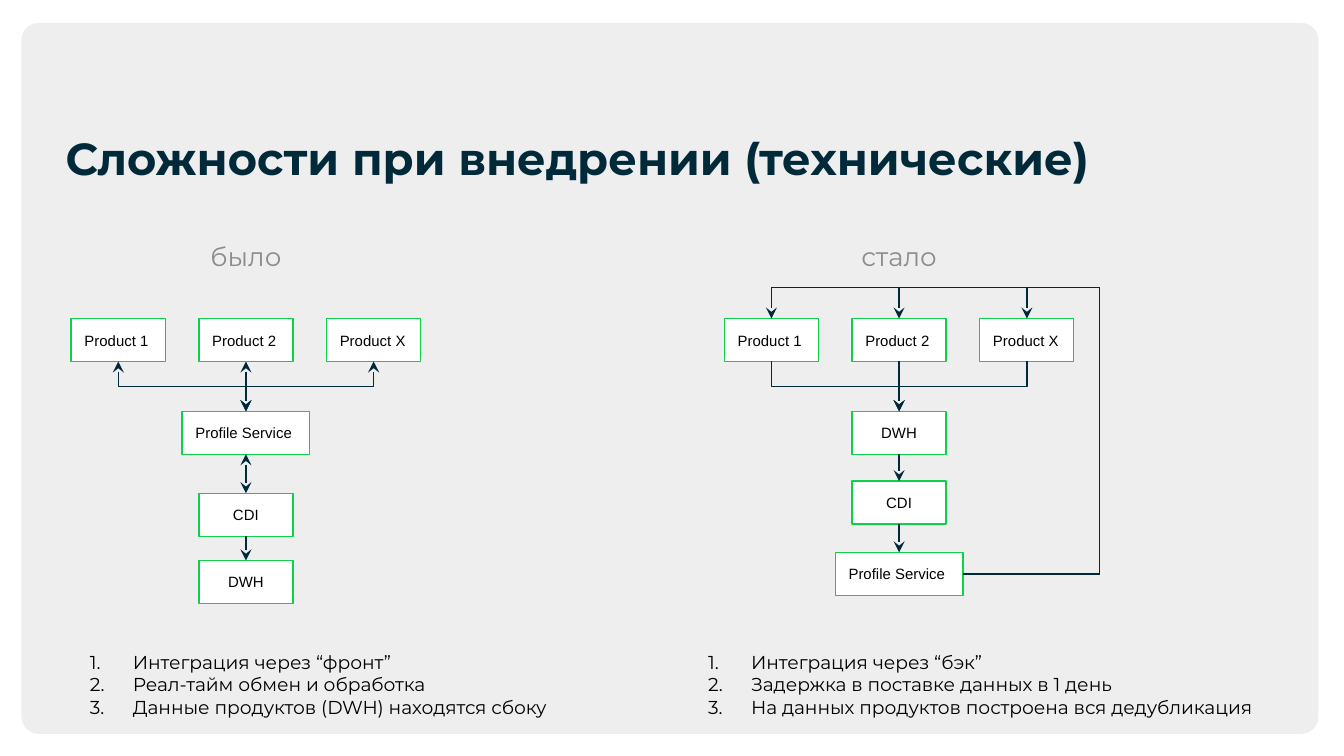
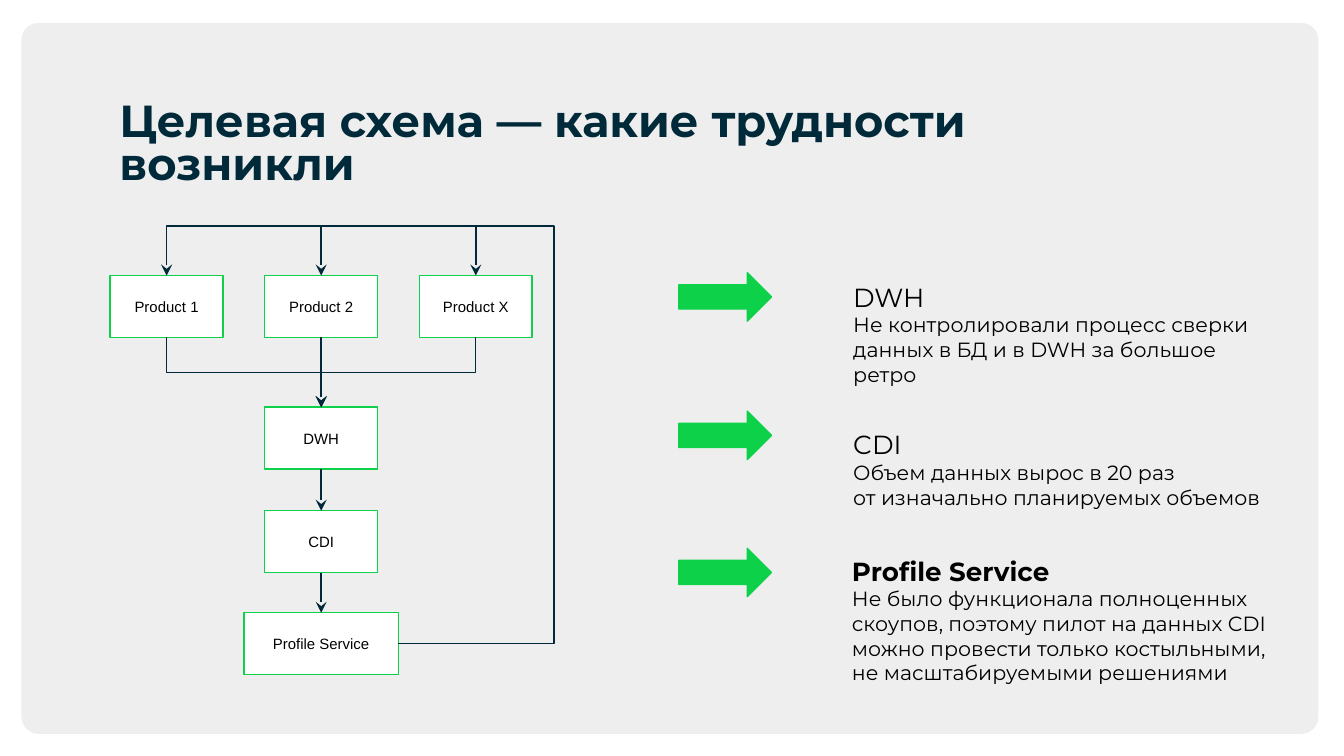
from lxml import etree
from pptx import Presentation
from pptx import util as u
from pptx.dml.color import RGBColor
from pptx.enum import shapes, text
from pptx.oxml.ns import qn

PX = u.Inches(0.01)
COLORS = {"panel": "EEEEEE", "navy": "002A3A", "green": "0DD149",
          "grey": "8C8C8C", "black": "000000", "white": "FFFFFF"}
LEFT, CENTER = text.PP_ALIGN.LEFT, text.PP_ALIGN.CENTER
TOP, MIDDLE = text.MSO_ANCHOR.TOP, text.MSO_ANCHOR.MIDDLE
SIDE = {"top": 0, "bottom": 2, "right": 3}


def px(value):
    return u.Emu(round(value * PX))


def rgb(name):
    return RGBColor.from_string(COLORS[name])


def write(shape, lines, font="Montserrat", size=10, color="black", bold=False, align=LEFT,
          anchor=TOP, margin_y=10, spacing=None, indent=None, numbered=False):
    """Fill a shape with paragraphs; a line is a string or (string, size, bold)."""
    frame = shape.text_frame
    frame.word_wrap = True
    frame.vertical_anchor = anchor
    frame.margin_left = frame.margin_right = px(10)
    frame.margin_top = frame.margin_bottom = px(margin_y)
    for index, line in enumerate(lines):
        content, line_size, line_bold = (line, size, bold) if isinstance(line, str) else line
        paragraph = frame.paragraphs[0] if index == 0 else frame.add_paragraph()
        paragraph.alignment = align
        if spacing:
            paragraph.line_spacing = spacing
        if indent:
            properties = paragraph._p.get_or_add_pPr()
            properties.set("marL", str(px(indent[0])))
            properties.set("indent", str(px(indent[1])))
            if numbered:
                bullet_color = etree.SubElement(properties, qn("a:buClr"))
                etree.SubElement(bullet_color, qn("a:srgbClr"), val=COLORS[color])
                etree.SubElement(properties, qn("a:buAutoNum"), type="arabicPeriod")
        for part_index, part in enumerate(content.split("\v")):
            if part_index:
                paragraph.add_line_break()
                line_break = paragraph._p.findall(qn("a:br"))[-1]
                etree.SubElement(line_break, qn("a:rPr"), sz=str(line_size * 100))
            run = paragraph.add_run()
            run.text = part
            run.font.name = font
            run.font.size = u.Pt(line_size)
            run.font.bold = line_bold
            run.font.color.rgb = rgb(color)


def add_text(slide, box, lines, **style):
    write(slide.shapes.add_textbox(*map(px, box)), lines, **style)


def add_box(slide, kind, box, fill, line=None):
    shape = slide.shapes.add_shape(kind, *map(px, box))
    shape.shadow.inherit = False
    shape.fill.solid()
    shape.fill.fore_color.rgb = rgb(fill)
    if line:
        shape.line.color.rgb = rgb(line)
        shape.line.width = u.Pt(0.75)
    else:
        shape.line.fill.background()
    return shape


def add_node(slide, box, label, align):
    node = add_box(slide, shapes.MSO_SHAPE.RECTANGLE, box, "white", "green")
    write(node, [label], font="Arial", size=8, align=align, anchor=MIDDLE)
    return node


def join(slide, kind, start, start_side, end, end_side, two_way=False):
    connector = slide.shapes.add_connector(kind, 0, 0, 0, 0)
    connector.begin_connect(start, SIDE[start_side])
    connector.end_connect(end, SIDE[end_side])
    connector.line.color.rgb = rgb("navy")
    connector.line.width = u.Pt(0.75)
    line = connector.line._get_or_add_ln()
    for tag in ("a:headEnd", "a:tailEnd") if two_way else ("a:tailEnd",):
        etree.SubElement(line, qn(tag), type="stealth")
    etree.SubElement(connector._element.spPr, qn("a:effectLst"))
    return connector


def bend(connector, preset, box, rotation, flip, adjustments):
    """Give an elbow its unrotated frame (EMU), turn and bend positions."""
    connector.left, connector.top, connector.width, connector.height = map(u.Emu, map(round, box))
    properties = connector._element.spPr
    frame = properties.find(qn("a:xfrm"))
    for name in ("flipH", "flipV"):
        frame.attrib.pop(name, None)
    frame.set("rot", str(rotation * 60000))
    if flip:
        frame.set("flipH", "1")
    geometry = properties.find(qn("a:prstGeom"))
    geometry.set("prst", preset)
    guides = geometry.find(qn("a:avLst"))
    if guides is None:
        guides = etree.SubElement(geometry, qn("a:avLst"))
    for index, value in enumerate(adjustments, 1):
        etree.SubElement(guides, qn("a:gd"), name=f"adj{index}",
                         fmla=f"val {round(value * 100000)}")


def middle_x(node):
    return node.left + node.width / 2


def join_down(slide, upper, lower, two_way=False):
    x1, x2 = middle_x(upper), middle_x(lower)
    if abs(x1 - x2) < PX:
        join(slide, shapes.MSO_CONNECTOR.STRAIGHT, upper, "bottom", lower, "top", two_way)
        return
    y1, y2 = upper.top + upper.height, lower.top
    drop, shift = y2 - y1, abs(x2 - x1)
    connector = join(slide, shapes.MSO_CONNECTOR.ELBOW, upper, "bottom", lower, "top", two_way)
    box = ((x1 + x2 - drop) / 2, (y1 + y2 - shift) / 2, drop, shift)
    rightward = x2 > x1
    bend(connector, "bentConnector3", box, 270 if rightward else 90, rightward, [0.5])


def join_back(slide, service, product, lane_x, lane_y):
    """Lead from the service's right side around and down into a product."""
    x1, y1 = service.left + service.width, service.top + service.height / 2
    x2, y2 = middle_x(product), product.top
    connector = join(slide, shapes.MSO_CONNECTOR.ELBOW, service, "right", product, "top")
    box = (min(x1, x2), y2, abs(x2 - x1), y1 - y2)
    bends = [(lane_x - x1) / (x2 - x1), (y1 - lane_y) / (y1 - y2)]
    bend(connector, "bentConnector4", box, 180, x2 > x1, bends)


def flow_diagram(slide, left, top, node_size, pitch, chain, align=CENTER, two_way=0, loop=None):
    """Row of products above a chain of (label, offset, width, align) nodes.

    The first two_way levels of links have two heads; loop is the right offset
    and the rise of the lane that leads back to the products.
    """
    width, height = node_size
    products = [add_node(slide, (left + i * pitch, top, width, height), label, align)
                for i, label in enumerate(("Product 1", "Product 2", "Product X"))]
    center = left + pitch + width / 2
    nodes = [add_node(slide, (center - w / 2, top + offset, w, height), label, node_align)
             for label, offset, w, node_align in chain]
    for product in products:
        join_down(slide, product, nodes[0], two_way > 0)
    for level, (upper, lower) in enumerate(zip(nodes, nodes[1:]), 1):
        join_down(slide, upper, lower, two_way > level)
    if loop:
        for product in reversed(products):
            join_back(slide, nodes[-1], product, px(left + loop[0]), px(top - loop[1]))


def base_slide(presentation, title, title_box):
    slide = presentation.slides.add_slide(presentation.slide_layouts[6])
    panel = add_box(slide, shapes.MSO_SHAPE.ROUNDED_RECTANGLE, (16, 17, 965, 529), "panel")
    panel.adjustments[0] = 0.024
    add_text(slide, title_box, [title], size=24, color="navy", bold=True, margin_y=5, spacing=0.8)
    return slide


def comparison_side(slide, left, label, list_box, points, **diagram):
    add_text(slide, (left + 79, 169, 102, 44), [label], size=14, color="grey", align=CENTER)
    flow_diagram(slide, left, 237, (70, 32), 95, align=LEFT, **diagram)
    add_text(slide, list_box, points, indent=(50, -32), numbered=True)


def comparison_slide(presentation):
    slide = base_slide(presentation, "Сложности при внедрении (технические)", (39, 100, 942, 44))
    comparison_side(
        slide, 53, "было", (39, 474, 392, 71),
        ["Интеграция через “фронт”", "Реал-тайм обмен и обработка",
         "Данные продуктов (DWH) находятся сбоку"],
        chain=[("Profile Service", 69, 95, LEFT), ("CDI", 130, 70, CENTER),
               ("DWH", 180, 70, CENTER)],
        two_way=2)
    comparison_side(
        slide, 539, "стало", (499, 474, 480, 71),
        ["Интеграция через “бэк”", "Задержка в поставке данных в 1 день",
         "На данных продуктов построена вся дедубликация"],
        chain=[("DWH", 69, 70, CENTER), ("CDI", 121, 70, CENTER),
               ("Profile Service", 174, 95, LEFT)],
        loop=(279, 23))


def difficulty(slide, arrow_top, box, heading, body, bold=False):
    add_box(slide, shapes.MSO_SHAPE.RIGHT_ARROW, (505, arrow_top, 69, 36), "green", "green")
    add_text(slide, box, [(heading, 14, bold), (body, 11, False)], indent=(50, 0))


def target_slide(presentation):
    slide = base_slide(presentation, "Целевая схема — какие трудности возникли",
                       (79, 72, 762, 53))
    flow_diagram(slide, 82, 205, (84, 46), 115,
                 chain=[("DWH", 98, 84, CENTER), ("CDI", 175, 84, CENTER),
                        ("Profile Service", 251, 115, CENTER)],
                 loop=(330, 37))
    difficulty(slide, 203, (575, 199, 378, 99), "DWH",
               "Не контролировали процесс сверки данных в БД и в DWH за большое ретро")
    difficulty(slide, 306, (575, 309, 378, 81), "CDI",
               "Объем данных вырос в 20 раз \vот изначально планируемых объемов")
    difficulty(slide, 408, (574, 403, 379, 118), "Profile Service",
               "Не было функционала полноценных скоупов, поэтому пилот на данных CDI "
               "можно провести только костыльными, не масштабируемыми решениями", bold=True)


def main():
    presentation = Presentation()
    presentation.slide_width, presentation.slide_height = px(1000), px(562.5)
    comparison_slide(presentation)
    target_slide(presentation)
    presentation.save("out.pptx")


if __name__ == "__main__":
    main()
